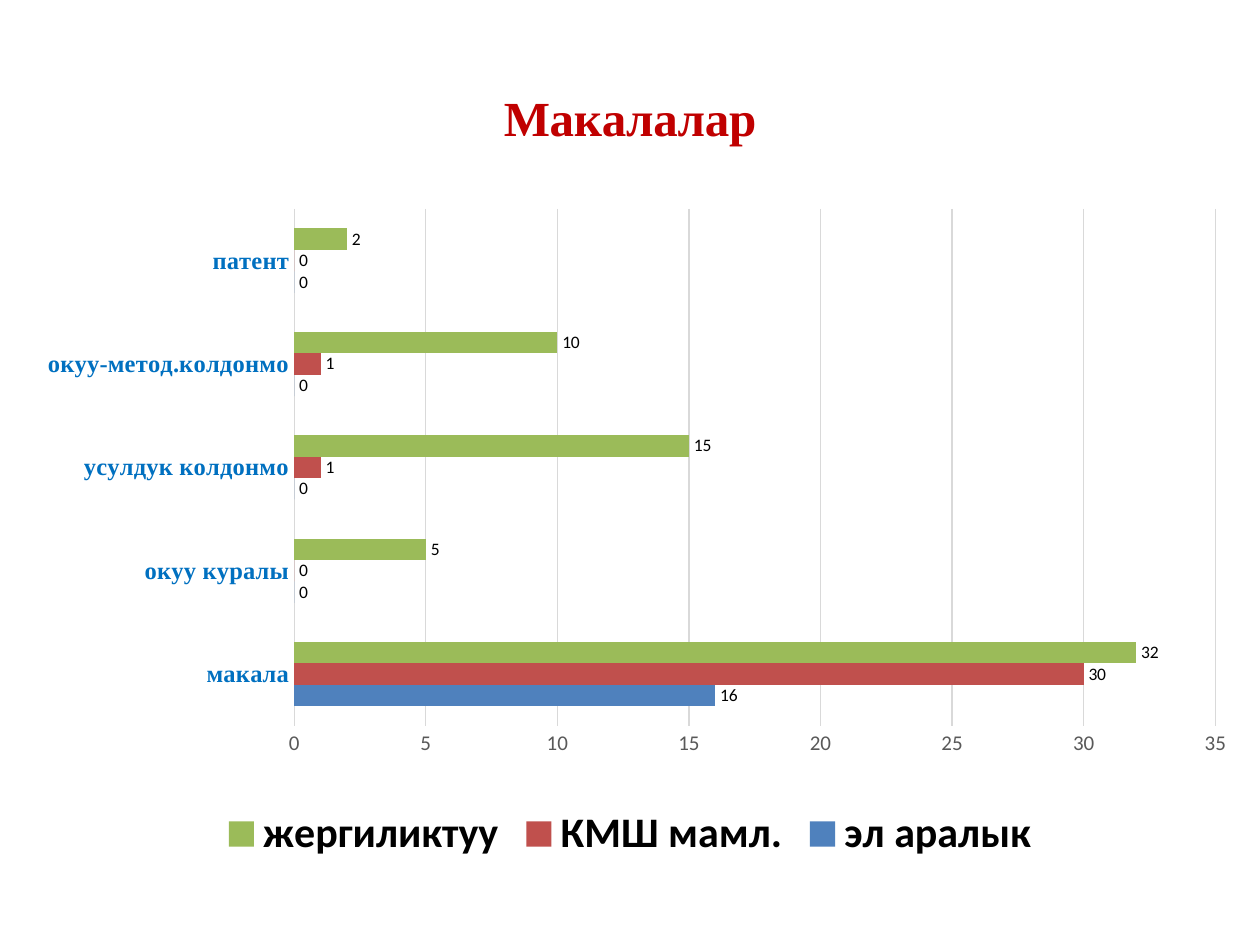
from pptx import Presentation
from pptx.chart.data import CategoryChartData
from pptx.dml.color import RGBColor
from pptx.enum.chart import XL_CHART_TYPE, XL_LABEL_POSITION, XL_LEGEND_POSITION, XL_TICK_MARK
from pptx.oxml import parse_xml
from pptx.oxml.ns import nsdecls
from pptx.util import Inches, Pt

SERIF, SANS = "Times New Roman", "Calibri"
GRID_COLOR = "D9D9D9"
CATEGORIES = ["макала", "окуу куралы", "усулдук колдонмо", "окуу-метод.колдонмо", "патент"]
PUBLICATIONS = [
    ("эл аралык", [16, 0, 0, 0, 0], "4F81BD"),
    ("КМШ мамл.", [30, 0, 1, 1, 0], "C0504D"),
    ("жергиликтуу", [32, 5, 15, 10, 2], "9BBB59"),
]


def rgb(hex_color):
    return RGBColor.from_string(hex_color)


def style_font(font, name, size, color, bold=False):
    font.name = name
    font.size = Pt(size)
    font.bold = bold
    font.color.rgb = rgb(color)


def style_line(line, color):
    line.color.rgb = rgb(color)
    line.width = Pt(0.75)


def set_inner_plot_layout(chart, x, y, width, height):
    """Fix the inner plot area, in fractions of the chart's size."""
    plot_area = chart.plots[0]._element.getparent()
    for old_layout in plot_area.findall("{*}layout"):
        plot_area.remove(old_layout)
    fractions = "".join(
        f'<c:{tag} val="{value}"/>' for tag, value in zip("xywh", (x, y, width, height))
    )
    plot_area.insert(0, parse_xml(
        f'<c:layout {nsdecls("c")}><c:manualLayout><c:layoutTarget val="inner"/>'
        f'<c:xMode val="edge"/><c:yMode val="edge"/>{fractions}'
        "</c:manualLayout></c:layout>"
    ))


def style_title(chart, text):
    chart.has_title = True
    chart.chart_title.include_in_layout = False
    heading = chart.chart_title.text_frame.paragraphs[0]
    heading.text = text
    style_font(heading.font, SERIF, 28, "C00000", bold=True)


def style_axes(chart):
    for axis in (chart.category_axis, chart.value_axis):
        axis.major_tick_mark = axis.minor_tick_mark = XL_TICK_MARK.NONE

    kinds = chart.category_axis
    style_font(kinds.tick_labels.font, SERIF, 14, "0070C0", bold=True)
    style_line(kinds.format.line, GRID_COLOR)

    counts = chart.value_axis
    counts.minimum_scale, counts.maximum_scale, counts.major_unit = 0, 35, 5
    counts.has_major_gridlines = True
    style_font(counts.tick_labels.font, SANS, 12, "595959")
    counts.format.line.fill.background()
    style_line(counts.major_gridlines.format.line, GRID_COLOR)


def style_bars(plot):
    plot.gap_width = 182
    plot.vary_by_categories = False
    for series, (_, _, color) in zip(plot.series, PUBLICATIONS):
        series.format.fill.solid()
        series.format.fill.fore_color.rgb = rgb(color)
        series.invert_if_negative = False
        labels = series.data_labels
        labels.show_value = True
        labels.position = XL_LABEL_POSITION.OUTSIDE_END
        style_font(labels.font, SANS, 10, "000000")


def add_publications_chart(slide, left, top, width, height):
    data = CategoryChartData()
    data.categories = CATEGORIES
    for name, values, _ in PUBLICATIONS:
        data.add_series(name, values)
    chart = slide.shapes.add_chart(
        XL_CHART_TYPE.BAR_CLUSTERED, left, top, width, height, data
    ).chart
    style_font(chart.font, SANS, 10, "000000")
    style_title(chart, "Макалалар")
    style_axes(chart)
    style_bars(chart.plots[0])
    set_inner_plot_layout(chart, 0.227, 0.189, 0.749, 0.636)

    chart.has_legend = True
    chart.legend.position = XL_LEGEND_POSITION.BOTTOM
    chart.legend.include_in_layout = False
    style_font(chart.legend.font, SANS, 24, "000000", bold=True)


def main():
    presentation = Presentation()
    presentation.slide_width, presentation.slide_height = Inches(10), Inches(7.5)
    slide = presentation.slides.add_slide(presentation.slide_layouts[6])
    add_publications_chart(slide, Inches(0.12), Inches(0.44), Inches(9.76), Inches(6.45))
    presentation.save("out.pptx")


if __name__ == "__main__":
    main()
